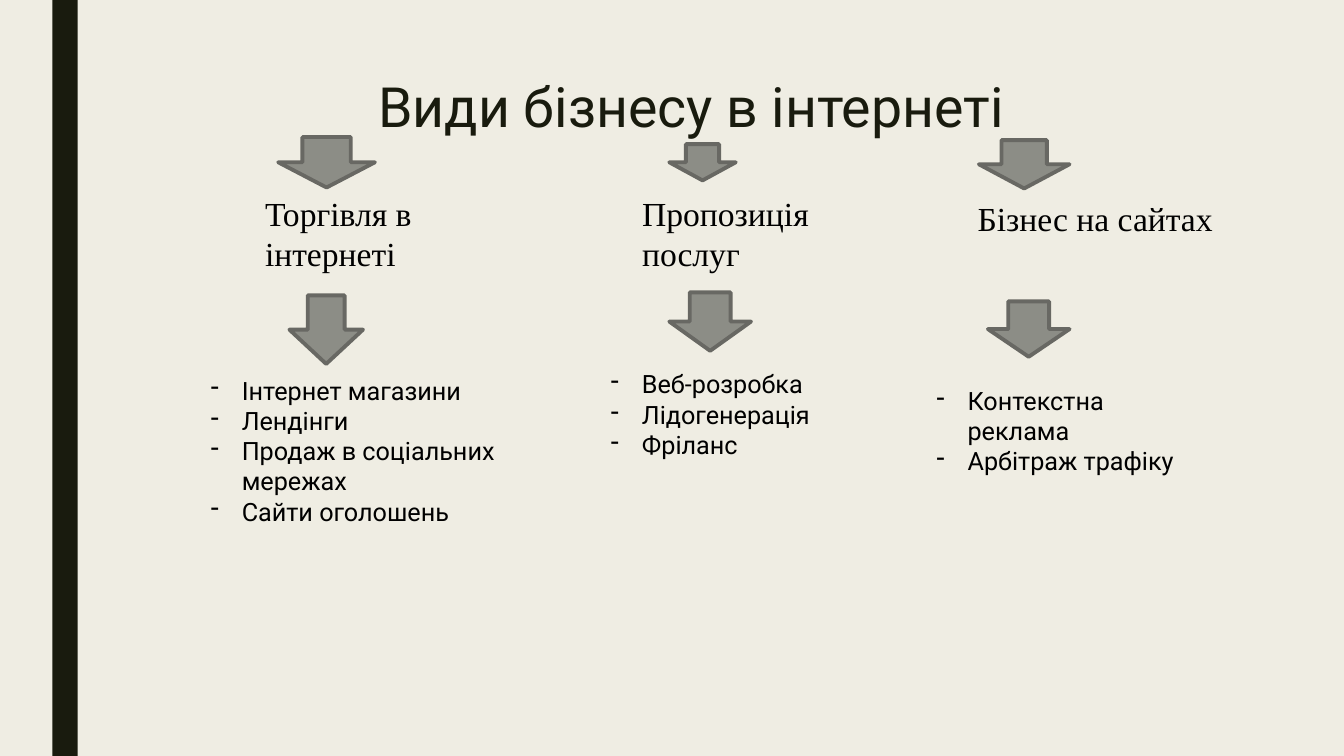
from dataclasses import dataclass
from typing import NamedTuple

from lxml import etree
from pptx import Presentation
from pptx import util as u
from pptx.dml.color import RGBColor
from pptx.enum import shapes, text
from pptx.oxml import ns

INK, PAPER, BLACK = "191B0E", "EFEDE3", "000000"
ARROW_FILL, ARROW_LINE = "8C8D86", "686863"
SANS, SERIF = "Roboto", "Times New Roman"
WIDTH, HEIGHT = u.Inches(13.33), u.Inches(7.5)
BULLET_INDENT = u.Inches(0.31)


class Box(NamedTuple):
    """Left, top, width and height in percent of the slide."""
    x: float
    y: float
    w: float
    h: float

    def emu(self) -> list[int]:
        sides = (WIDTH, HEIGHT, WIDTH, HEIGHT)
        return [round(side * share / 100) for side, share in zip(sides, self)]


@dataclass
class Branch:
    heading: str
    items: list[str]
    upper_arrow: Box
    heading_box: Box
    lower_arrow: Box
    list_box: Box


BRANCHES = [
    Branch("Торгівля в інтернеті",
           ["Інтернет магазини", "Лендінги",
            "Продаж в соціальних мережах", "Сайти оголошень"],
           Box(20.7, 18.13, 7.2, 6.67), Box(18.98, 24.8, 22.2, 12.13),
           Box(21.53, 39.07, 5.48, 9.07), Box(14.93, 48.93, 23.48, 21.6)),
    Branch("Пропозиція послуг",
           ["Веб-розробка", "Лідогенерація", "Фріланс"],
           Box(49.8, 19.07, 4.95, 4.8), Box(47.03, 24.8, 19.95, 12.13),
           Box(49.8, 38.67, 6.08, 7.73), Box(44.7, 48.13, 18.45, 17.47)),
    Branch("Бізнес на сайтах",
           ["Контекстна реклама", "Арбітраж трафіку"],
           Box(72.83, 18.53, 6.75, 6.4), Box(72, 25.47, 21, 6.67),
           Box(73.5, 39.87, 6.08, 7.33), Box(68.93, 50.27, 21.08, 9.47)),
]


def rgb(value: str) -> RGBColor:
    return RGBColor.from_string(value)


def add_shape(s, kind, box: Box, fill: str, line: str = "") -> None:
    sp = s.shapes.add_shape(kind, *box.emu())
    sp.shadow.inherit = False
    sp.fill.solid()
    sp.fill.fore_color.rgb = rgb(fill)
    if line:
        sp.line.color.rgb = rgb(line)
        sp.line.width = u.Pt(2.75)
    else:
        sp.line.fill.background()


def add_dash(p) -> None:
    pPr = p._p.get_or_add_pPr()
    pPr.set("marL", str(BULLET_INDENT))
    pPr.set("indent", str(-BULLET_INDENT))
    etree.SubElement(pPr, ns.qn("a:buChar")).set("char", "-")


def add_text(s, box: Box, lines: list[str], size: float, font: str,
             color: str = BLACK, dashed: bool = False, **paragraph) -> None:
    tf = s.shapes.add_textbox(*box.emu()).text_frame
    tf.word_wrap = True
    for i, line in enumerate(lines):
        p = tf.paragraphs[0] if i == 0 else tf.add_paragraph()
        for name, value in paragraph.items():
            setattr(p, name, value)
        if dashed:
            add_dash(p)
        r = p.add_run()
        r.text = line
        for name, value in {"name": font, "size": u.Pt(size)}.items():
            setattr(r.font, name, value)
        r.font.color.rgb = rgb(color)


def main() -> None:
    prs = Presentation()
    prs.slide_width, prs.slide_height = WIDTH, HEIGHT
    s = prs.slides.add_slide(prs.slide_layouts[6])

    # Background and side bar
    s.background.fill.solid()
    s.background.fill.fore_color.rgb = rgb(PAPER)
    add_shape(s, shapes.MSO_SHAPE.RECTANGLE, Box(3.9, 0, 1.88, 100), INK)

    # Title
    add_text(s, Box(12.83, 10, 77.18, 8.13), ["Види бізнесу в інтернеті"],
             39.6, SANS, INK, alignment=text.PP_ALIGN.CENTER,
             line_spacing=0.89)

    # Branches: arrow, heading, arrow, list
    for branch in BRANCHES:
        for arrow in (branch.upper_arrow, branch.lower_arrow):
            add_shape(s, shapes.MSO_SHAPE.DOWN_ARROW, arrow,
                      ARROW_FILL, ARROW_LINE)
        add_text(s, branch.heading_box, [branch.heading], 24, SERIF)
        add_text(s, branch.list_box, branch.items, 18, SANS, dashed=True)

    prs.save("out.pptx")


if __name__ == "__main__":
    main()
